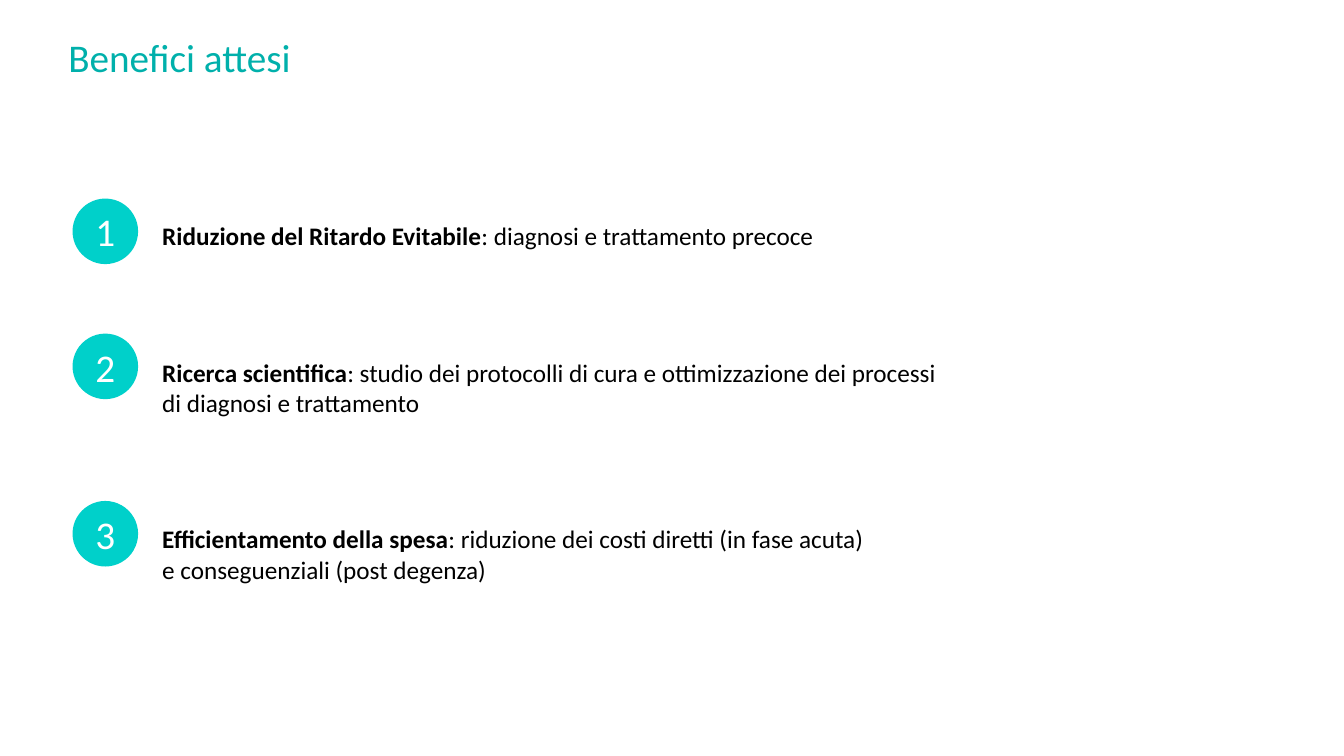
"""Build the slide on expected benefits: a title and three numbered points."""
from pptx import Presentation
from pptx.dml.color import RGBColor
from pptx.enum.shapes import MSO_SHAPE as Shape
from pptx.enum.text import MSO_ANCHOR as Anchor, PP_ALIGN as Align
from pptx.util import Inches, Pt

COLORS = {"title": "00B0AB", "badge": "00D0CA", "number": "FFFFFF", "body": "000000"}
BENEFITS = [
    (26.27, "Riduzione del Ritardo Evitabile", ": diagnosi e trattamento precoce", ""),
    (44.13, "Ricerca scientifica",
     ": studio dei protocolli di cura e ottimizzazione dei processi",
     "di diagnosi e trattamento"),
    (66.27, "Efficientamento della spesa",
     ": riduzione dei costi diretti (in fase acuta)",
     "e conseguenziali (post degenza)"),
]

deck = Presentation()
deck.slide_width, deck.slide_height = Inches(13.33), Inches(7.5)
column, row = deck.slide_width / 100, deck.slide_height / 100
slide = deck.slides.add_slide(deck.slide_layouts[6])


def add_run(paragraph, text, size, color, bold=False):
    run = paragraph.add_run()
    run.text = text
    run.font.name, run.font.size, run.font.bold = "Calibri", Pt(size), bold
    run.font.color.rgb = RGBColor.from_string(COLORS[color])


def add_text_frame(left, top, width, height):
    box = slide.shapes.add_textbox(
        int(left * column), int(top * row), int(width * column), int(height * row))
    box.text_frame.word_wrap = True
    return box.text_frame


title = add_text_frame(4.35, 4.8, 90.7, 6.27)
title.vertical_anchor = Anchor.MIDDLE
title.paragraphs[0].line_spacing = 0.9
add_run(title.paragraphs[0], "Benefici attesi", 28, "title")

benefits = add_text_frame(11.33, 26.53, 67.97, 51.87)
diameter = int(4.88 * column)
for number, (top, name, detail, continuation) in enumerate(BENEFITS, 1):
    badge = slide.shapes.add_shape(
        Shape.OVAL, int(5.4 * column), int(top * row), diameter, diameter)
    badge.shadow.inherit = False
    badge.fill.solid()
    badge.fill.fore_color.rgb = RGBColor.from_string(COLORS["badge"])
    badge.line.fill.background()
    label = badge.text_frame
    label.margin_left = label.margin_right = label.margin_top = label.margin_bottom = 0
    label.vertical_anchor = Anchor.MIDDLE
    label.paragraphs[0].alignment = Align.CENTER
    add_run(label.paragraphs[0], str(number), 28, "number")

    heading = benefits.paragraphs[0] if number == 1 else benefits.add_paragraph()
    heading.line_spacing = 1.5
    heading.space_before = Pt(0 if number == 1 else 65)
    add_run(heading, name, 18, "body", bold=True)
    add_run(heading, detail, 18, "body")
    if continuation:
        add_run(benefits.add_paragraph(), continuation, 18, "body")

deck.save("out.pptx")
